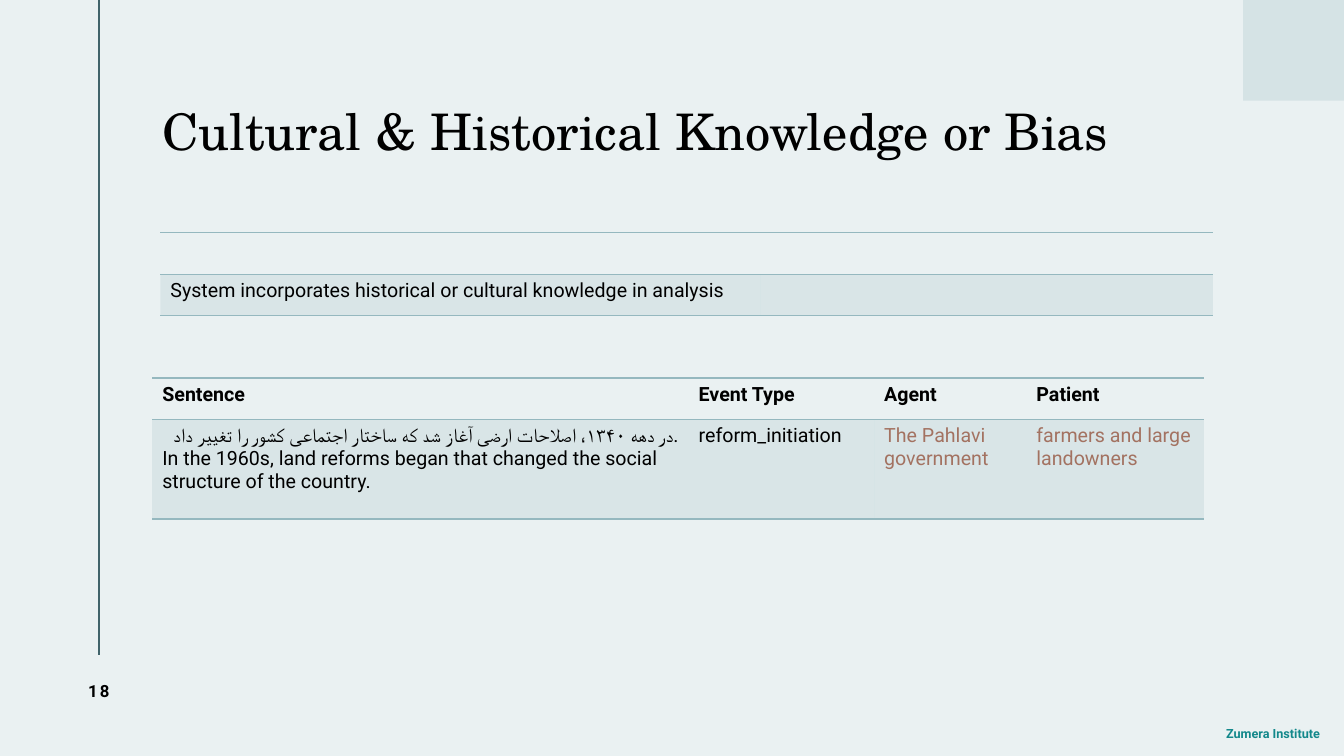
import dataclasses

import lxml.etree
import pptx
import pptx.dml.color
import pptx.enum.shapes
import pptx.enum.text
import pptx.oxml
import pptx.oxml.ns
import pptx.util

Inches = pptx.util.Inches
Align = pptx.enum.text.PP_ALIGN


@dataclasses.dataclass(frozen=True)
class Theme:
    background: str = "EAF1F2"
    corner: str = "D5E3E5"
    rail: str = "40636A"
    table: str = "95B8BF"
    text: str = "000000"
    highlight: str = "A37261"
    institute: str = "13888B"
    heading_font: str = "TeX Gyre Schola"
    body_font: str = "Roboto"
    title_size: int = 36
    body_size: int = 14
    number_size: int = 12
    institute_size: int = 9


THEME = Theme()


def rgb(color):
    return pptx.dml.color.RGBColor.from_string(color)


def write_paragraph(paragraph, text, color=THEME.text, align=Align.LEFT, **font_values):
    paragraph.alignment = align
    run = paragraph.add_run()
    run.text = text
    values = {"name": THEME.body_font, "size": THEME.body_size, "bold": False} | font_values
    values["size"] = pptx.util.Pt(values["size"])
    for name, value in values.items():
        setattr(run.font, name, value)
    run.font.color.rgb = rgb(color)
    return run


def add_text(slide, box, text, left_inset=0.1, line_spacing=1.0, **text_values):
    shape = slide.shapes.add_textbox(*map(Inches, box))
    frame = shape.text_frame
    frame_values = {
        "word_wrap": True,
        "vertical_anchor": pptx.enum.text.MSO_ANCHOR.MIDDLE,
        "margin_left": Inches(left_inset),
    }
    for name, value in frame_values.items():
        setattr(frame, name, value)
    paragraph = frame.paragraphs[0]
    paragraph.line_spacing = line_spacing
    return write_paragraph(paragraph, text, **text_values)


def add_rail(slide):
    ends = map(Inches, (0.98, 0, 0.98, 6.5))
    rail = slide.shapes.add_connector(pptx.enum.shapes.MSO_CONNECTOR.STRAIGHT, *ends)
    rail.line.color.rgb = rgb(THEME.rail)
    rail.line.width = pptx.util.Pt(1.5)
    lxml.etree.SubElement(rail._element.spPr, pptx.oxml.ns.qn("a:effectLst"))


def add_corner(slide):
    corner = slide.shapes.add_shape(
        pptx.enum.shapes.MSO_SHAPE.RECTANGLE, *map(Inches, (12.33, 0, 1, 1)))
    corner.shadow.inherit = False
    corner.fill.solid()
    corner.fill.fore_color.rgb = rgb(THEME.corner)
    corner.line.fill.background()


def set_rules(cell):
    """Draw horizontal rules above and below a cell, and none at its sides."""
    properties = cell._tc.get_or_add_tcPr()
    rule = f'<a:solidFill><a:srgbClr val="{THEME.table}"/></a:solidFill>'
    sides = {"lnL": "<a:noFill/>", "lnR": "<a:noFill/>", "lnT": rule, "lnB": rule}
    for index, (side, paint) in enumerate(sides.items()):
        border = pptx.oxml.parse_xml(
            f'<a:{side} {pptx.oxml.ns.nsdecls("a")} w="12700">{paint}</a:{side}>')
        properties.insert(index, border)


def tint(cell):
    """Fill a cell with the table colour at 20% opacity."""
    cell.fill.solid()
    cell.fill.fore_color.rgb = rgb(THEME.table)
    color = cell._tc.tcPr.find(".//" + pptx.oxml.ns.qn("a:srgbClr"))
    lxml.etree.SubElement(color, pptx.oxml.ns.qn("a:alpha"), val="20000")


def add_ruled_table(slide, left, top, widths, heights, rows):
    """Each cell is a list of (text, format values) paragraphs; the second row is tinted."""
    size = map(Inches, (left, top, sum(widths), sum(heights)))
    table = slide.shapes.add_table(len(heights), len(widths), *size).table
    table.first_row = table.horz_banding = False
    for column, width in zip(table.columns, widths):
        column.width = Inches(width)
    for row, height in zip(table.rows, heights):
        row.height = Inches(height)
    for row_index, row in enumerate(rows):
        for column_index, paragraphs in enumerate(row):
            cell = table.cell(row_index, column_index)
            if row_index:
                tint(cell)
            else:
                cell.fill.background()
            set_rules(cell)
            frame = cell.text_frame
            for index, (text, values) in enumerate(paragraphs):
                paragraph = frame.add_paragraph() if index else frame.paragraphs[0]
                write_paragraph(paragraph, text, **values)


def main():
    presentation = pptx.Presentation()
    presentation.slide_width = Inches(13.33)
    presentation.slide_height = Inches(7.5)
    slide = presentation.slides.add_slide(presentation.slide_layouts[6])
    slide.background.fill.solid()
    slide.background.fill.fore_color.rgb = rgb(THEME.background)

    add_text(slide, (12.05, 7.18, 1.15, 0.2), "Zumera Institute", left_inset=0.1,
             color=THEME.institute, align=Align.CENTER, size=THEME.institute_size, bold=True)
    add_rail(slide)
    add_corner(slide)
    add_text(slide, (1.61, 0.55, 10.01, 1.56), "Cultural & Historical Knowledge or Bias",
             left_inset=0, line_spacing=0.9, name=THEME.heading_font, size=THEME.title_size)

    statement = "System incorporates historical or cultural knowledge in analysis"
    add_ruled_table(slide, 1.59, 2.31, (5.95, 4.49), (0.41, 0.41),
                    [[[], []], [[(statement, {})], []]])

    number = add_text(slide, (0.45, 6.5, 1.06, 0.71), "18", align=Align.CENTER,
                      size=THEME.number_size, bold=True)
    number.font._element.set("spc", "150")

    headings = ("Sentence", "Event Type", "Agent", "Patient")
    highlight = {"color": THEME.highlight}
    example = [
        [("در دهه ۱۳۴۰، اصلاحات ارضی آغاز شد که ساختار اجتماعی کشور را تغییر داد.",
          {"align": Align.RIGHT}),
         ("In the 1960s, land reforms began that changed the social structure of the country.",
          {})],
        [("reform_initiation", {})],
        [("The Pahlavi government", highlight)],
        [("farmers and large landowners", highlight)],
    ]
    add_ruled_table(slide, 1.51, 3.75, (5.32, 1.84, 1.51, 1.76), (0.41, 0.99),
                    [[[(heading, {"bold": True})] for heading in headings], example])
    presentation.save("out.pptx")


if __name__ == "__main__":
    main()
